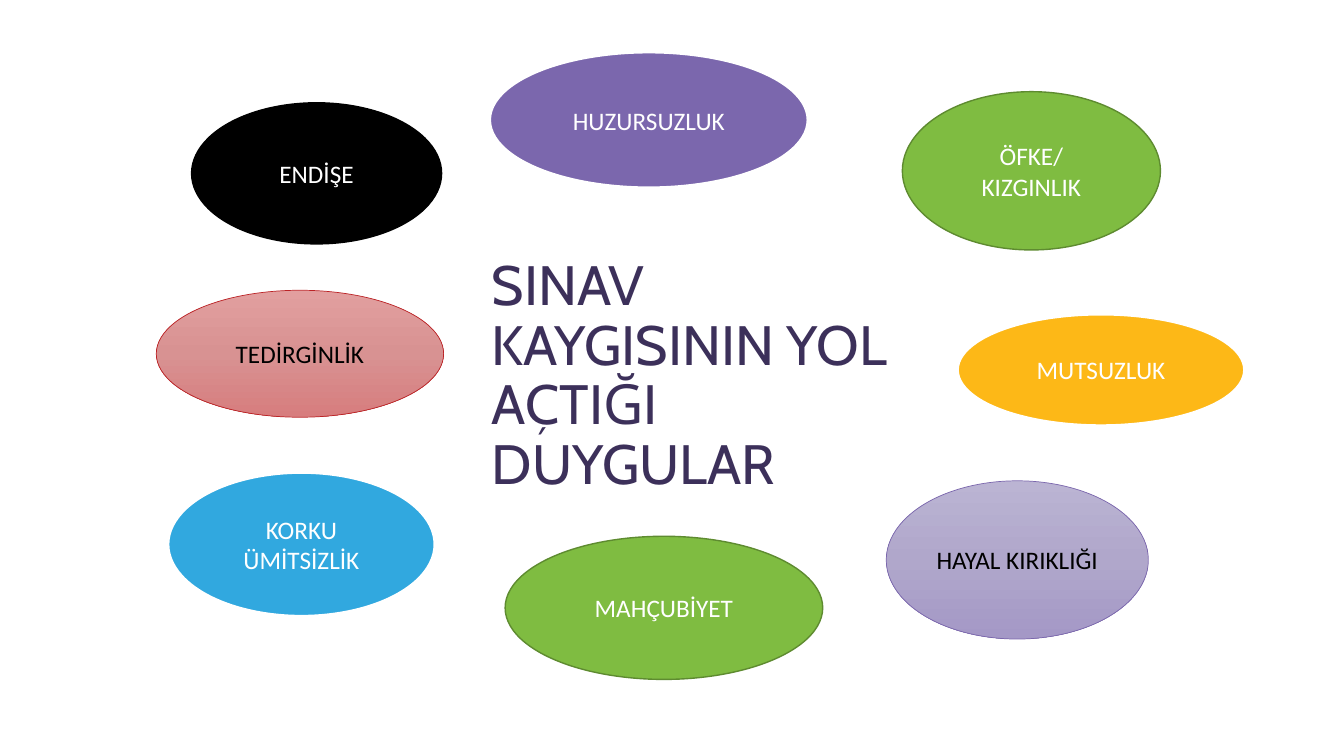
"""Build a slide of the feelings that exam anxiety causes, set around a title."""
import copy

import pptx
import pptx.dml.color
import pptx.enum.shapes
import pptx.enum.text
import pptx.oxml.ns
import pptx.util

PX = 9144
SLIDE_SIZE = (1333, 750)

COLORS = {
    "white": "FFFFFF",
    "black": "000000",
    "title": "3C305A",
    "purple": "7B67AD",
    "green": "7FBC41",
    "dark green": "5E8B30",
    "blue": "31A8DF",
    "yellow": "FDB817",
    "red": "BB2326",
    "lilac top": "BBB4D3",
    "lilac middle": "B0A7CB",
    "lilac bottom": "A498C6",
    "rose top": "E29F9F",
    "rose middle": "D89292",
    "rose bottom": "D77D7E",
}

STYLES = {
    "black": (["black"], "black", 1, "white"),
    "purple": (["purple"], "white", 1.5, "white"),
    "green": (["green"], "dark green", 1, "white"),
    "blue": (["blue"], "white", 1.5, "white"),
    "yellow": (["yellow"], "white", 1.5, "white"),
    "lilac": (["lilac top", "lilac middle", "lilac bottom"], "purple", 0.5, "black"),
    "rose": (["rose top", "rose middle", "rose bottom"], "red", 0.5, "black"),
}

TITLE = ("SINAV KAYGISININ YOL AÇTIĞI DUYGULAR", (478, 312, 441, 124))

FEELINGS = [
    (["ENDİŞE"], (190, 102, 248, 140), "black"),
    (["HUZURSUZLUK"], (486, 52, 315, 134), "purple"),
    (["ÖFKE/", "KIZGINLIK"], (895, 91, 256, 157), "green"),
    (["KORKU", "ÜMİTSİZLİK"], (167, 469, 264, 142), "blue"),
    (["MAHÇUBİYET"], (501, 532, 315, 142), "green"),
    (["HAYAL KIRIKLIĞI"], (879, 477, 260, 157), "lilac"),
    (["MUTSUZLUK"], (950, 312, 284, 110), "yellow"),
    (["TEDİRGİNLİK"], (155, 288, 285, 126), "rose"),
]


def rgb(name):
    """Return the named colour."""
    return pptx.dml.color.RGBColor.from_string(COLORS[name])


def emu(lengths):
    """Turn px lengths into EMU."""
    return [length * PX for length in lengths]


def write(shape, lines, font, size, color, alignment, spacing=None):
    """Write one paragraph for each line, centred in height."""
    frame = shape.text_frame
    frame.word_wrap = True
    frame.vertical_anchor = pptx.enum.text.MSO_ANCHOR.MIDDLE
    for index, line in enumerate(lines):
        paragraph = frame.add_paragraph() if index else frame.paragraphs[0]
        paragraph.alignment = alignment
        paragraph.line_spacing = spacing
        run = paragraph.add_run()
        run.text = line
        run.font.name = font
        run.font.size = pptx.util.Pt(size)
        run.font.color.rgb = rgb(color)


def paint(shape, colors):
    """Fill with one colour, or with three from top to bottom."""
    fill = shape.fill
    if len(colors) == 1:
        fill.solid()
        fill.fore_color.rgb = rgb(colors[0])
        return
    fill.gradient()
    fill.gradient_angle = 270
    first_stop = next(shape._element.iter(pptx.oxml.ns.qn("a:gs")))
    first_stop.addnext(copy.deepcopy(first_stop))
    for stop, color, position in zip(fill.gradient_stops, colors, (0, 0.5, 1)):
        stop.color.rgb = rgb(color)
        stop.position = position


def add_feeling(slide, lines, box, style):
    """Add an ellipse that names a feeling."""
    fill_colors, line_color, line_width, text_color = STYLES[style]
    ellipse = slide.shapes.add_shape(pptx.enum.shapes.MSO_SHAPE.OVAL, *emu(box))
    ellipse.shadow.inherit = False
    paint(ellipse, fill_colors)
    ellipse.line.color.rgb = rgb(line_color)
    ellipse.line.width = pptx.util.Pt(line_width)
    write(ellipse, lines, "Calibri", 18, text_color, pptx.enum.text.PP_ALIGN.CENTER)


def main():
    """Build and save the presentation."""
    presentation = pptx.Presentation()
    presentation.slide_width, presentation.slide_height = emu(SLIDE_SIZE)
    slide = presentation.slides.add_slide(presentation.slide_layouts[6])
    text, box = TITLE
    title = slide.shapes.add_textbox(*emu(box))
    write(title, [text], "Cabin", 39.6, "title", pptx.enum.text.PP_ALIGN.LEFT, 0.9)
    for feeling in FEELINGS:
        add_feeling(slide, *feeling)
    presentation.save("out.pptx")


if __name__ == "__main__":
    main()
